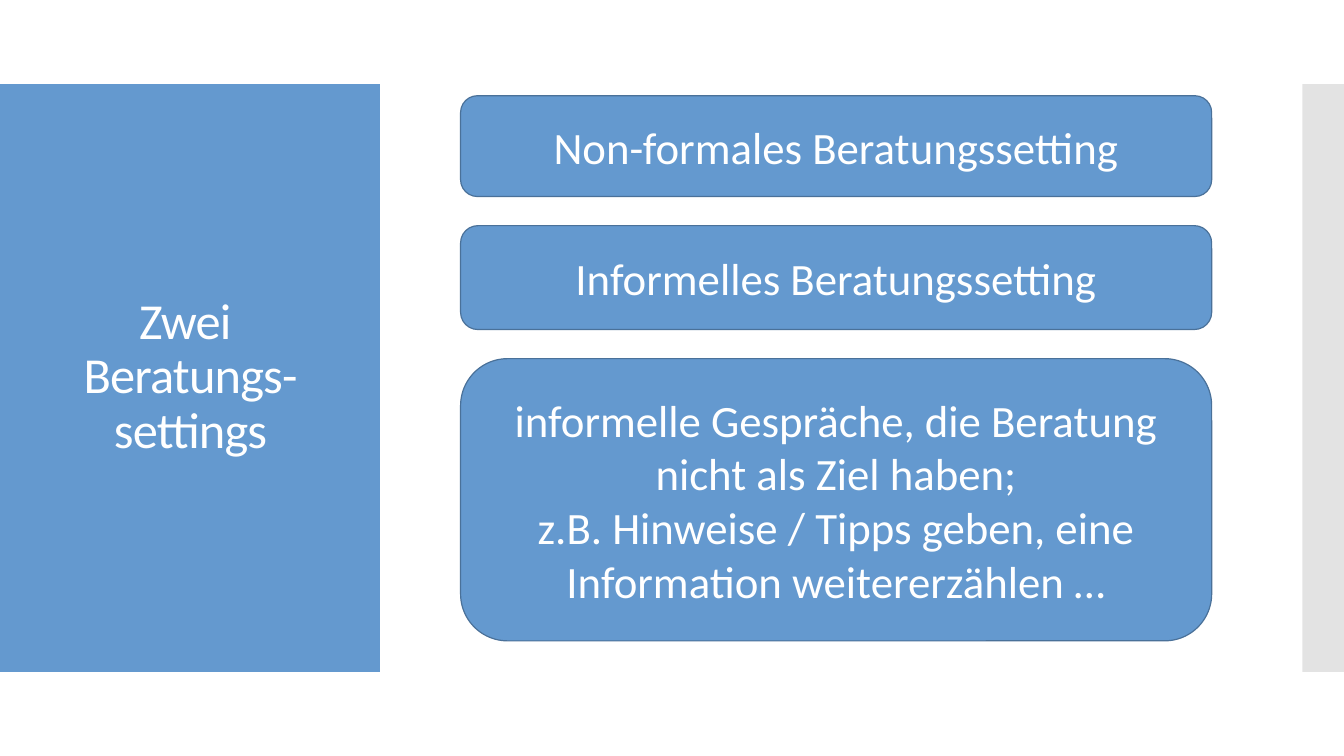
from lxml.etree import SubElement
from pptx import Presentation
from pptx.dml.color import RGBColor
from pptx.enum.shapes import MSO_SHAPE as Shape
from pptx.enum.text import MSO_ANCHOR as Anchor, PP_ALIGN as Align
from pptx.oxml.ns import qn
from pptx.util import Pt

BLUE = "6499CF"
OUTLINE = "4A7199"
GREY = "C8C8C8"
WHITE = "FFFFFF"

BAND_TOP, BAND_HEIGHT = 60, 420
CARD_LEFT, CARD_WIDTH, CARD_GAP = 329, 536.5, 20.8

SETTINGS = [
    ("Non-formales Beratungssetting", 72),
    ("Informelles Beratungssetting", 74.2),
    ("informelle Gespräche, die Beratung nicht als Ziel haben;\v"
     "z.B. Hinweise / Tipps geben, eine Information weitererzählen …", 201.6),
]


def paint(color_format, color):
    color_format.rgb = RGBColor.from_string(color)


def write(part, text, size, line_spacing=1.0, tracking=0):
    frame = part.text_frame
    frame.word_wrap = True
    frame.vertical_anchor = Anchor.MIDDLE
    frame.text = text
    paragraph = frame.paragraphs[0]
    paragraph.alignment = Align.CENTER
    paragraph.line_spacing = line_spacing
    for run in paragraph.runs:
        run.font.name = "Calibri"
        run.font.size = Pt(size)
        paint(run.font.color, WHITE)
        if tracking:
            run.font._element.set("spc", str(int(tracking * 100)))


def add_block(slide, preset, left, top, width, height, color):
    block = slide.shapes.add_shape(preset, Pt(left), Pt(top), Pt(width), Pt(height))
    block.shadow.inherit = False
    block.fill.solid()
    paint(block.fill.fore_color, color)
    block.line.fill.background()
    return block


def add_band(slide, left, width, color, opacity=100):
    band = add_block(slide, Shape.RECTANGLE, left, BAND_TOP, width, BAND_HEIGHT, color)
    if opacity < 100:
        tint = band.fill._xPr.find(".//" + qn("a:srgbClr"))
        SubElement(tint, qn("a:alpha"), val=str(opacity * 1000))


def add_title(slide, text):
    title = slide.shapes.add_textbox(Pt(20.2), Pt(88.6), Pt(231.8), Pt(362.2))
    write(title, text, 36, line_spacing=0.9, tracking=-0.6)


def add_card(slide, top, height, text):
    card = add_block(slide, Shape.ROUNDED_RECTANGLE, CARD_LEFT, top,
                     CARD_WIDTH, height, BLUE)
    paint(card.line.color, OUTLINE)
    card.line.width = Pt(0.85)
    write(card, text, 32)


def main():
    deck = Presentation()
    deck.slide_width, deck.slide_height = Pt(960), Pt(540)
    slide = deck.slides.add_slide(deck.slide_layouts[6])

    add_band(slide, 0, 271.3, BLUE)
    add_band(slide, 930.3, 29.7, GREY, opacity=50)
    add_title(slide, "Zwei \vBeratungs-\vsettings")

    top = 68.4
    for text, height in SETTINGS:
        add_card(slide, top, height, text)
        top += height + CARD_GAP

    deck.save("out.pptx")


if __name__ == "__main__":
    main()
